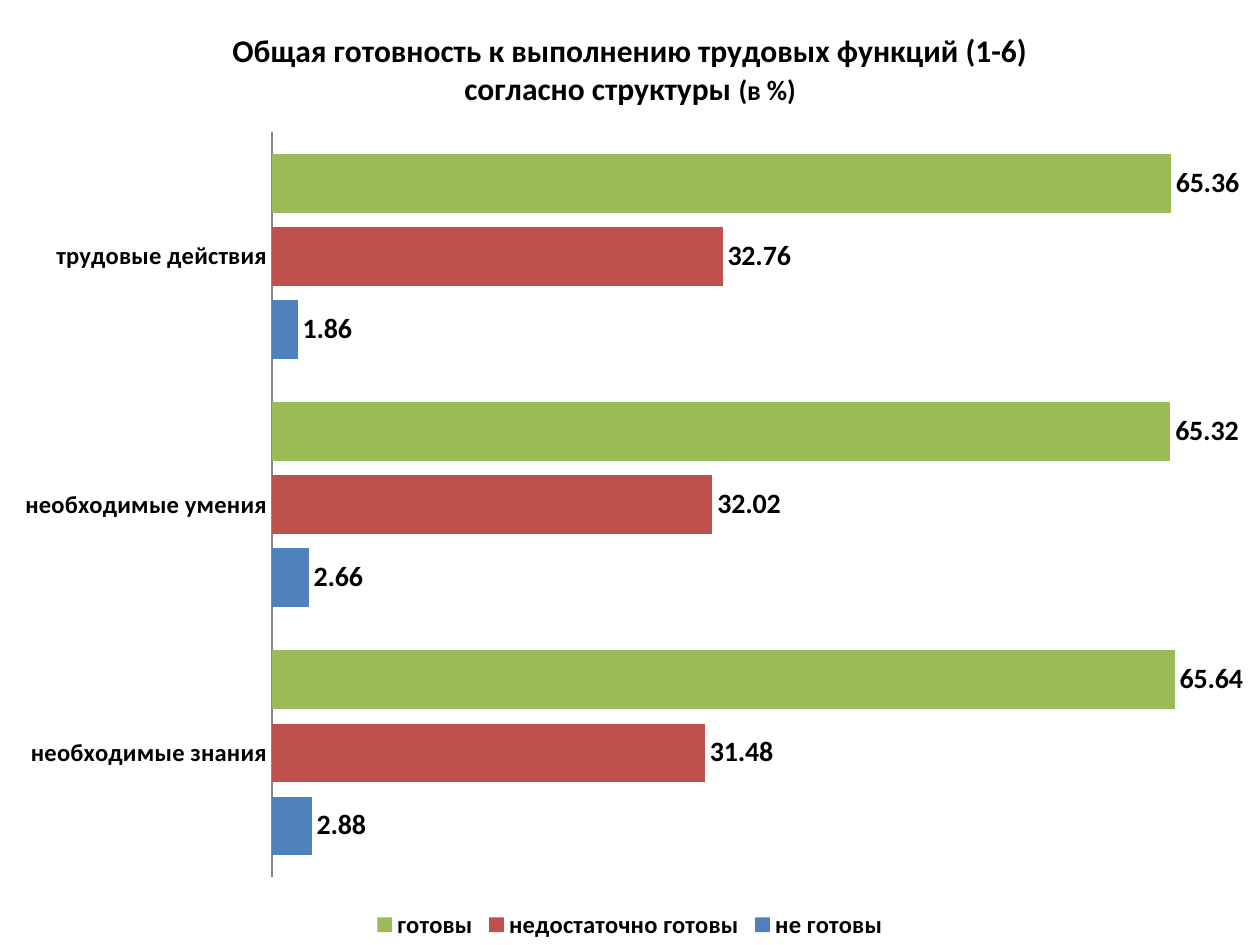
from lxml.etree import SubElement
from pptx import Presentation
from pptx.chart.data import CategoryChartData
from pptx.dml.color import RGBColor
from pptx.enum.chart import (XL_CHART_TYPE, XL_LABEL_POSITION,
                             XL_LEGEND_POSITION, XL_TICK_MARK)
from pptx.oxml.ns import qn
from pptx.util import Inches, Pt


def style(font, size, bold=True):
    font.name, font.size, font.bold = "Calibri", Pt(size), bold
    font.color.rgb = tint("000000")


def tint(code):
    return RGBColor.from_string(code)


deck = Presentation()
deck.slide_width, deck.slide_height = Inches(10), Inches(7.5)
slide = deck.slides.add_slide(deck.slide_layouts[6])

# Data: one row per level of readiness
rows = [
    ("не готовы", (2.88, 2.66, 1.86), "4F81BD"),
    ("недостаточно готовы", (31.48, 32.02, 32.76), "C0504D"),
    ("готовы", (65.64, 65.32, 65.36), "9BBB59"),
]
data = CategoryChartData()
data.categories = ["необходимые знания", "необходимые умения", "трудовые действия"]
for name, values, code in rows:
    data.add_series(name, values)

# Chart over the whole slide
chart = slide.shapes.add_chart(
    XL_CHART_TYPE.BAR_CLUSTERED, 0, 0, deck.slide_width, deck.slide_height, data).chart
style(chart.font, 10, False)

# Title
chart.has_title = True
frame = chart.chart_title.text_frame
chart.chart_title.include_in_layout = False
first, second = frame.paragraphs[0], frame.add_paragraph()
for para, text, size in (
        (first, "Общая готовность к выполнению трудовых функций (1-6)", 18),
        (second, "согласно структуры ", 18),
        (second, "(в %)", 16)):
    run = para.add_run()
    run.text = text
    style(run.font, size)

# Bars and their labels
plot = chart.plots[0]
plot.gap_width, plot.overlap = 75, -25
plot.vary_by_categories = False
for bars, (name, values, code) in zip(plot.series, rows):
    bars.format.fill.solid()
    bars.format.fill.fore_color.rgb = tint(code)
    bars.invert_if_negative = False
    labels = bars.data_labels
    labels.show_value = True
    labels.position = XL_LABEL_POSITION.OUTSIDE_END
    style(labels.font, 16)

# Axes
names = chart.category_axis
names.major_tick_mark = names.minor_tick_mark = XL_TICK_MARK.NONE
names.format.line.color.rgb = tint("868686")
style(names.tick_labels.font, 14)
scale = chart.value_axis
scale.visible = False
scale.has_major_gridlines = False
scale.minimum_scale, scale.maximum_scale = 0, 70

# Legend
chart.has_legend = True
chart.legend.position = XL_LEGEND_POSITION.BOTTOM
chart.legend.include_in_layout = False
style(chart.legend.font, 14)

# Plot area as shares of the slide
area = chart.element.find(".//" + qn("c:plotArea"))
layout = area.find(qn("c:layout"))
if layout is None:
    layout = SubElement(area, qn("c:layout"))
    area.insert(0, layout)
manual = SubElement(layout, qn("c:manualLayout"))
for tag, value in (("layoutTarget", "inner"), ("xMode", "edge"), ("yMode", "edge"),
                   ("x", "0.216"), ("y", "0.14"), ("w", "0.764"), ("h", "0.788")):
    SubElement(manual, qn("c:" + tag)).set("val", value)

deck.save("out.pptx")
